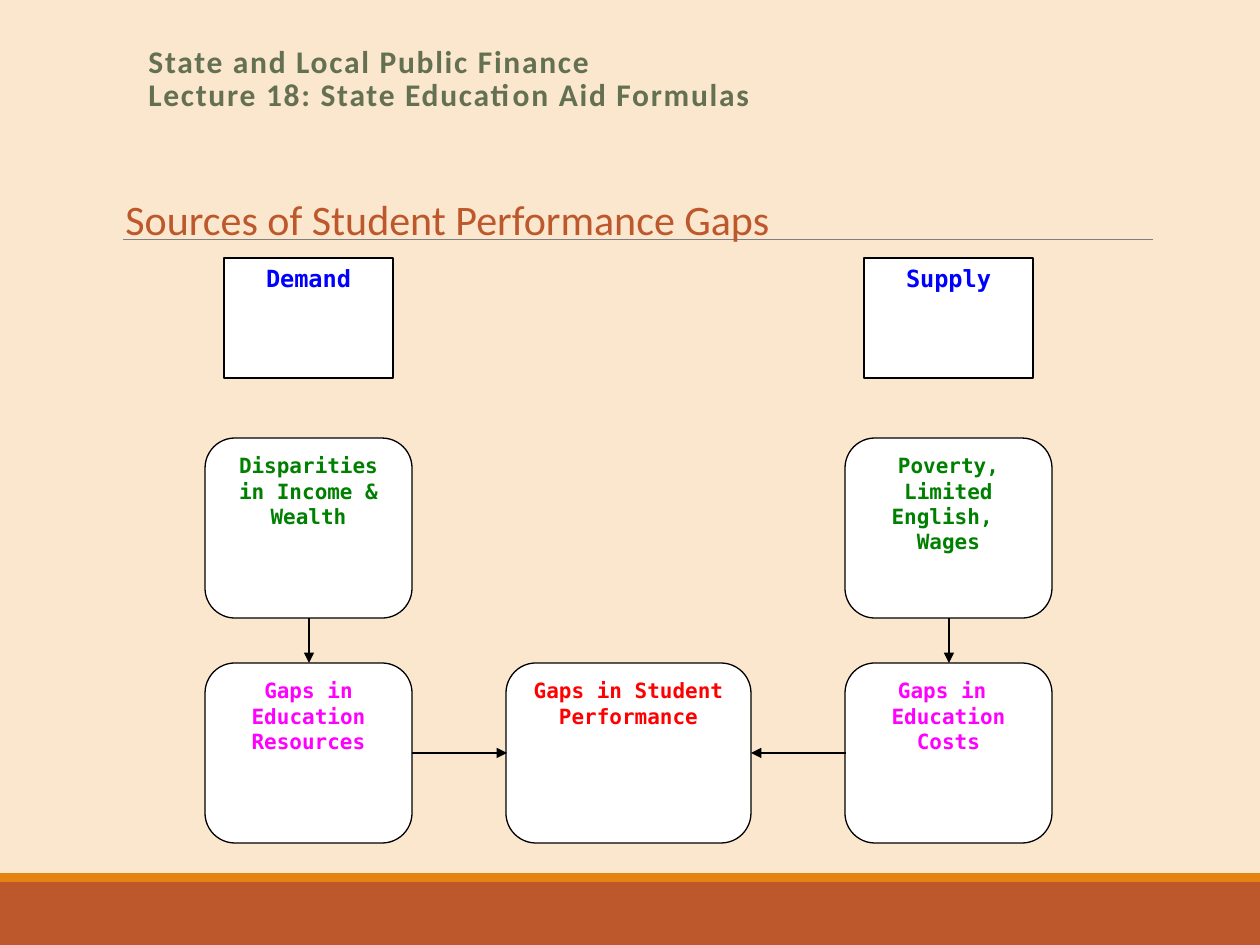
from typing import NamedTuple

from lxml.etree import SubElement
from pptx import Presentation
from pptx.dml.color import RGBColor
from pptx.enum.shapes import MSO_CONNECTOR, MSO_SHAPE
from pptx.enum.text import MSO_ANCHOR, PP_ALIGN
from pptx.oxml.ns import qn
from pptx.util import Emu, Pt

SCALE = 914400 / 126

CREAM = RGBColor(0xFB, 0xE6, 0xCE)
RUST = RGBColor(0xBD, 0x58, 0x2C)
ORANGE = RGBColor(0xE4, 0x83, 0x12)
OLIVE = RGBColor(0x63, 0x70, 0x52)
GRAY = RGBColor(0x80, 0x80, 0x80)
WHITE = RGBColor(0xFF, 0xFF, 0xFF)
BLACK = RGBColor(0x00, 0x00, 0x00)
BLUE = RGBColor(0x00, 0x00, 0xFF)
GREEN = RGBColor(0x00, 0x80, 0x00)
PINK = RGBColor(0xFF, 0x00, 0xFF)
RED = RGBColor(0xFF, 0x00, 0x00)

SANS = "Calibri"
MONO = "DejaVu Sans Mono"

LEFT, MID, RIGHT = 309, 629, 949
HEAD, CAUSE, GAP = 258, 438, 663
HIGH = 180
SIDE, CORE = 207, 245
AXIS = GAP + HIGH // 2


class Node(NamedTuple):
    center: int
    top: int
    width: int
    height: int
    label: str
    color: RGBColor
    size: float = 12
    kind: MSO_SHAPE = MSO_SHAPE.FLOWCHART_ALTERNATE_PROCESS


class Link(NamedTuple):
    x1: int
    y1: int
    x2: int
    y2: int


def header(center: int, label: str) -> Node:
    return Node(center, HEAD, 169, 120, label, BLUE, 13.5, MSO_SHAPE.FLOWCHART_PROCESS)


NODES = [
    header(LEFT, "Demand"),
    header(RIGHT, "Supply"),
    Node(LEFT, CAUSE, SIDE, HIGH, "Disparities in Income & Wealth", GREEN),
    Node(RIGHT, CAUSE, SIDE, HIGH, "Poverty, Limited English,  Wages", GREEN),
    Node(LEFT, GAP, SIDE, HIGH, "Gaps in Education Resources", PINK),
    Node(RIGHT, GAP, SIDE, HIGH, "Gaps in  Education Costs", PINK),
    Node(MID, GAP, CORE, HIGH, "Gaps in Student Performance", RED),
]

LINKS = [
    Link(LEFT, CAUSE + HIGH, LEFT, GAP),
    Link(RIGHT, CAUSE + HIGH, RIGHT, GAP),
    Link(LEFT + SIDE // 2, AXIS, MID - CORE // 2, AXIS),
    Link(RIGHT - SIDE // 2, AXIS, MID + CORE // 2, AXIS),
]


def px(value: int) -> Emu:
    return Emu(round(value * SCALE))


def write(shape, text: str, *, size: float, color: RGBColor, font: str = SANS,
          bold: bool = False, align=PP_ALIGN.LEFT, anchor=MSO_ANCHOR.TOP,
          leading: float = 1.0, spacing: int = 0) -> None:
    frame = shape.text_frame
    frame.word_wrap = True
    frame.vertical_anchor = anchor
    para = frame.paragraphs[0]
    para.text = text
    para.alignment = align
    para.line_spacing = leading
    for run in para.runs:
        run.font.name = font
        run.font.size = Pt(size)
        run.font.bold = bold
        run.font.color.rgb = color
        if spacing:
            run.font._element.set("spc", str(spacing))


def draw_box(slide, kind, x: int, y: int, w: int, h: int, fill: RGBColor, line=None):
    shape = slide.shapes.add_shape(kind, px(x), px(y), px(w), px(h))
    shape.shadow.inherit = False
    shape.fill.solid()
    shape.fill.fore_color.rgb = fill
    if line is None:
        shape.line.fill.background()
    else:
        shape.line.color.rgb = line
        shape.line.width = Pt(0.75)
    return shape


def draw_node(slide, node: Node) -> None:
    left = node.center - node.width // 2 - 1
    shape = draw_box(slide, node.kind, left, node.top, node.width, node.height, WHITE, BLACK)
    write(shape, node.label, size=node.size, color=node.color, font=MONO,
          bold=True, align=PP_ALIGN.CENTER)


def draw_line(slide, link: Link, color: RGBColor, width: float, arrow: bool = False) -> None:
    line = slide.shapes.add_connector(
        MSO_CONNECTOR.STRAIGHT, px(link.x1), px(link.y1), px(link.x2), px(link.y2))
    line.line.color.rgb = color
    line.line.width = Pt(width)
    if arrow:
        SubElement(line.line._get_or_add_ln(), qn("a:tailEnd"), type="triangle")
    SubElement(line._element.spPr, qn("a:effectLst"))


def draw_text(slide, x: int, y: int, w: int, h: int, text: str, **style) -> None:
    write(slide.shapes.add_textbox(px(x), px(y), px(w), px(h)), text, **style)


def main() -> None:
    deck = Presentation()
    deck.slide_width, deck.slide_height = px(1260), px(945)
    slide = deck.slides.add_slide(deck.slide_layouts[6])
    slide.background.fill.solid()
    slide.background.fill.fore_color.rgb = CREAM

    draw_box(slide, MSO_SHAPE.RECTANGLE, 0, 882, 1260, 63, RUST)
    draw_box(slide, MSO_SHAPE.RECTANGLE, 0, 873, 1260, 9, ORANGE)
    draw_line(slide, Link(123, 239, 1153, 239), GRAY, 0.5)
    draw_text(slide, 113, 187, 698, 64, "Sources of Student Performance Gaps",
              size=24, color=RUST, anchor=MSO_ANCHOR.MIDDLE)

    for node in NODES:
        draw_node(slide, node)
    for link in LINKS:
        draw_line(slide, link, BLACK, 0.75, arrow=True)

    draw_text(slide, 136, 42, 1040, 82,
              "State and Local Public Finance\nLecture 18: State Education Aid Formulas",
              size=18, color=OLIVE, bold=True, leading=0.85, spacing=100)
    deck.save("out.pptx")


if __name__ == "__main__":
    main()
